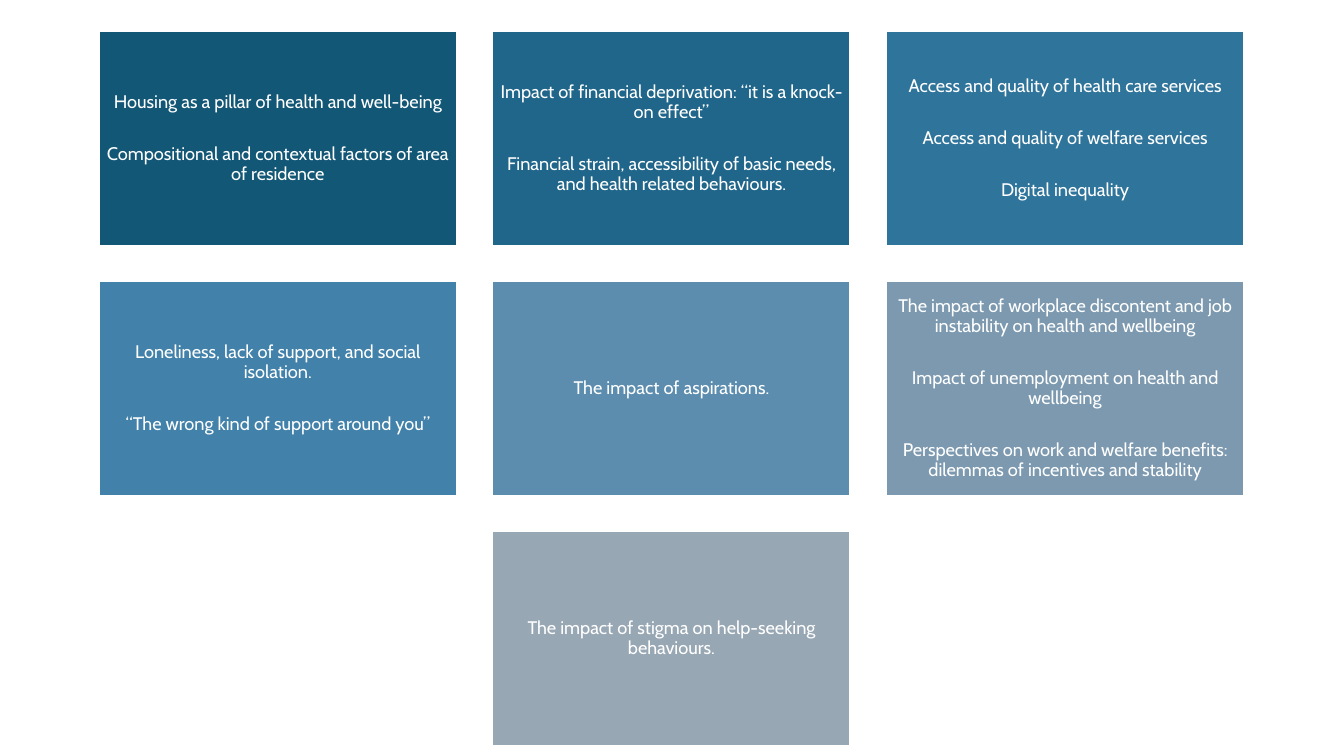
import dataclasses

import pptx
import pptx.dml.color
import pptx.enum.shapes
import pptx.enum.text
import pptx.slide
import pptx.text.text
import pptx.util

COLOURS = {
    "white": "FFFFFF",
    "housing": "135776",
    "finance": "20668A",
    "services": "2F749B",
    "support": "4281A9",
    "aspirations": "5C8DAF",
    "work": "7C99B0",
    "stigma": "98A7B4",
}

# Grid of theme cards, in centimetres
LEFT, TOP = 2.49, 0.79
CARD_WIDTH, CARD_HEIGHT = 9.02, 5.41
COLUMN_STEP, ROW_STEP = 9.92, 6.3
INSET = 0.13


@dataclasses.dataclass(frozen=True)
class Theme:
    colour: str
    column: int
    row: int
    findings: tuple[str, ...]


THEMES = (
    Theme("housing", 0, 0, (
        "Housing as a pillar of health and well-being",
        "Compositional and contextual factors of area of residence",
    )),
    Theme("finance", 1, 0, (
        "Impact of financial deprivation: “it is a knock-on effect”",
        "Financial strain, accessibility of basic needs, and health related behaviours.",
    )),
    Theme("services", 2, 0, (
        "Access and quality of health care services",
        "Access and quality of welfare services",
        "Digital inequality",
    )),
    Theme("support", 0, 1, (
        "Loneliness, lack of support, and social isolation.",
        "“The wrong kind of support around you”",
    )),
    Theme("aspirations", 1, 1, ("The impact of aspirations.",)),
    Theme("work", 2, 1, (
        "The impact of workplace discontent and job instability on health and wellbeing",
        "Impact of unemployment on health and wellbeing",
        "Perspectives on work and welfare benefits: dilemmas of incentives and stability",
    )),
    Theme("stigma", 1, 2, ("The impact of stigma on help-seeking behaviours.",)),
)


def rgb(colour: str) -> pptx.dml.color.RGBColor:
    return pptx.dml.color.RGBColor.from_string(COLOURS[colour])


def write_paragraph(
    paragraph: pptx.text.text._Paragraph,
    text: str,
    *,
    font: str = "Cabin",
    size: float = 13,
    colour: str = "white",
    space_before: float = 0,
) -> None:
    paragraph.alignment = pptx.enum.text.PP_ALIGN.CENTER
    paragraph.line_spacing = 0.9
    paragraph.space_before = pptx.util.Pt(space_before)
    run = paragraph.add_run()
    run.text = text
    run.font.name = font
    run.font.size = pptx.util.Pt(size)
    run.font.color.rgb = rgb(colour)


def draw_theme(slide: pptx.slide.Slide, theme: Theme) -> None:
    card = slide.shapes.add_shape(
        pptx.enum.shapes.MSO_SHAPE.RECTANGLE,
        pptx.util.Cm(LEFT + theme.column * COLUMN_STEP),
        pptx.util.Cm(TOP + theme.row * ROW_STEP),
        pptx.util.Cm(CARD_WIDTH),
        pptx.util.Cm(CARD_HEIGHT),
    )
    card.shadow.inherit = False
    card.fill.solid()
    card.fill.fore_color.rgb = rgb(theme.colour)
    card.line.color.rgb = rgb("white")
    card.line.width = pptx.util.Pt(1.5)

    frame = card.text_frame
    frame.word_wrap = True
    frame.vertical_anchor = pptx.enum.text.MSO_ANCHOR.MIDDLE
    frame.margin_left = frame.margin_right = pptx.util.Cm(INSET)
    frame.margin_top = frame.margin_bottom = pptx.util.Cm(INSET)
    for index, finding in enumerate(theme.findings):
        paragraph = frame.add_paragraph() if index else frame.paragraphs[0]
        write_paragraph(paragraph, finding, space_before=23.3 if index else 0)


def main() -> None:
    presentation = pptx.Presentation()
    presentation.slide_width = pptx.util.Cm(33.87)
    presentation.slide_height = pptx.util.Cm(19.05)
    blank_layout = presentation.slide_layouts.get_by_name("Blank")
    slide = presentation.slides.add_slide(blank_layout)
    for theme in THEMES:
        draw_theme(slide, theme)
    presentation.save("out.pptx")


if __name__ == "__main__":
    main()
